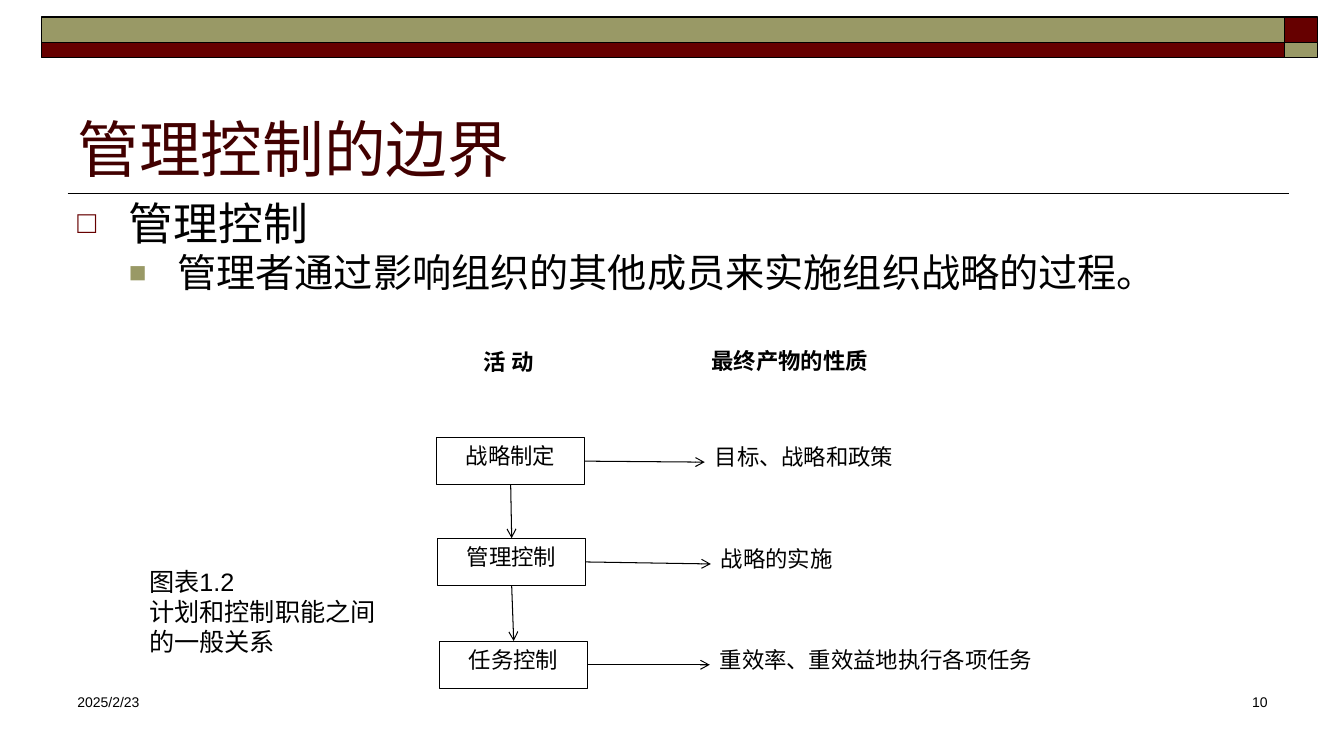
from dataclasses import dataclass

from lxml.etree import SubElement
from pptx import Presentation
from pptx.dml.color import RGBColor
from pptx.enum.shapes import MSO_CONNECTOR, MSO_SHAPE
from pptx.enum.text import MSO_ANCHOR, PP_ALIGN
from pptx.oxml.ns import qn
from pptx.util import Inches, Pt


@dataclass(frozen=True)
class Theme:
    black: str = "000000"
    white: str = "FFFFFF"
    maroon: str = "660000"
    olive: str = "999966"
    title_color: str = "420000"
    heading_font: str = "Noto Sans CJK SC"
    diagram_font: str = "Calibri"
    small_font: str = "Arial"
    title_size: int = 44
    body_size: int = 32
    sub_size: int = 28
    caption_size: int = 18
    diagram_size: int = 16
    footer_size: int = 10


THEME = Theme()


def style(paragraph, font_name, size, color=THEME.black, bold=False):
    font = paragraph.font
    font.name, font.size, font.bold = font_name, Pt(size), bold
    font.color.rgb = RGBColor.from_string(color)
    if font_name == THEME.heading_font:
        properties = paragraph._p.get_or_add_pPr().find(qn("a:defRPr"))
        SubElement(properties, qn("a:ea"), typeface=font_name)


def add_rectangle(slide, left, top, width, height, fill, line_width=None):
    shape = slide.shapes.add_shape(
        MSO_SHAPE.RECTANGLE, Inches(left), Inches(top), Inches(width), Inches(height))
    shape.shadow.inherit = False
    shape.fill.solid()
    shape.fill.fore_color.rgb = RGBColor.from_string(fill)
    if line_width:
        shape.line.color.rgb = RGBColor.from_string(THEME.black)
        shape.line.width = Pt(line_width)
    else:
        shape.line.fill.background()
    return shape


def add_line(slide, start, end, width, arrow=False):
    connector = slide.shapes.add_connector(
        MSO_CONNECTOR.STRAIGHT, *(Inches(value) for value in (*start, *end)))
    connector.line.color.rgb = RGBColor.from_string(THEME.black)
    connector.line.width = Pt(width)
    if arrow:
        SubElement(connector.line._get_or_add_ln(), qn("a:tailEnd"), type="arrow")
    SubElement(connector._element.spPr, qn("a:effectLst"))


def add_text_frame(slide, left, top, width, height):
    box = slide.shapes.add_textbox(Inches(left), Inches(top), Inches(width), Inches(height))
    box.text_frame.word_wrap = True
    return box.text_frame


def add_bullet(paragraph, symbol, color, percent, margin, hanging):
    properties = paragraph._p.get_or_add_pPr()
    properties.set("marL", str(Inches(margin)))
    properties.set("indent", str(-Inches(hanging)))
    SubElement(SubElement(properties, qn("a:buClr")), qn("a:srgbClr"), val=color)
    SubElement(properties, qn("a:buSzPct"), val=str(percent * 1000))
    SubElement(properties, qn("a:buFont"), typeface=THEME.small_font)
    SubElement(properties, qn("a:buChar"), char=symbol)


def add_banner(slide, left, top, width):
    """Two stripes, each ending in a corner block of the other colour."""
    corner = 0.33
    stripe = width - corner
    for offset, height, fill, corner_fill in (
            (0, 0.25, THEME.olive, THEME.maroon),
            (0.25, 0.15, THEME.maroon, THEME.olive)):
        add_rectangle(slide, left, top + offset, stripe, height, fill, 1)
        add_rectangle(slide, left + stripe, top + offset, corner, height, corner_fill, 1)


def add_title(slide, left, top, width, height):
    title = slide.shapes.title
    title.left, title.top = Inches(left), Inches(top)
    title.width, title.height = Inches(width), Inches(height)
    frame = title.text_frame
    frame.text = "管理控制的边界"
    frame.vertical_anchor = MSO_ANCHOR.BOTTOM
    frame.margin_bottom = 0
    paragraph = frame.paragraphs[0]
    paragraph.alignment = PP_ALIGN.LEFT
    style(paragraph, THEME.heading_font, THEME.title_size, THEME.title_color)
    add_line(slide, (left, top + 1.34), (left + width + 0.11, top + 1.34), 1)


def add_body(slide, left, top, width, height):
    frame = add_text_frame(slide, left, top, width, height)
    topic = frame.paragraphs[0]
    topic.text = "管理控制"
    add_bullet(topic, "□", THEME.maroon, 70, 0.51, 0.51)
    style(topic, THEME.heading_font, THEME.body_size)
    topic.space_before = Pt(4)

    definition = frame.add_paragraph()
    definition.text = "管理者通过影响组织的其他成员来实施组织战略的过程。"
    definition.level = 1
    add_bullet(definition, "■", THEME.olive, 75, 0.99, 0.48)
    style(definition, THEME.heading_font, THEME.sub_size)
    definition.line_spacing = 0.9
    definition.space_before = Pt(2.8)


def add_diagram_box(slide, left, top, width, height, text, alignment,
                    line_width=None, bold=False):
    shape = add_rectangle(slide, left, top, width, height, THEME.white, line_width)
    frame = shape.text_frame
    frame.word_wrap = True
    frame.vertical_anchor = MSO_ANCHOR.TOP
    paragraph = frame.paragraphs[0]
    paragraph.text = text
    paragraph.alignment = alignment
    paragraph.space_before = Pt(3.2)
    style(paragraph, THEME.diagram_font, THEME.diagram_size, bold=bold)


def add_diagram(slide, left, top):
    """Activities down the left, the product of each one to its right."""
    width, height = 1.47, 0.47
    product_width = 2.65
    add_diagram_box(slide, left, top + 0.01, width, height, "活 动",
                    PP_ALIGN.CENTER, bold=True)
    add_diagram_box(slide, left + 2.65, top, product_width, height, "最终产物的性质",
                    PP_ALIGN.JUSTIFY, bold=True)

    # Offsets: activity x and y, product x and y, product width
    steps = (
        ("战略制定", 0.02, 0.95, "目标、战略和政策", 2.68, 0.96, product_width),
        ("管理控制", 0.03, 1.95, "战略的实施", 2.74, 1.97, product_width),
        ("任务控制", 0.05, 2.97, "重效率、重效益地执行各项任务", 2.73, 2.97, 3.43),
    )
    previous_bottom = None
    for activity, x, y, product, product_x, product_y, wide in steps:
        box_left, box_top = left + x, top + y
        product_left, product_top = left + product_x, top + product_y
        add_diagram_box(slide, box_left, box_top, width, height, activity,
                        PP_ALIGN.CENTER, line_width=0.5)
        add_diagram_box(slide, product_left, product_top, wide, height, product,
                        PP_ALIGN.JUSTIFY)
        add_line(slide, (box_left + width, box_top + height / 2),
                 (product_left, product_top + height / 2), 0.75, arrow=True)
        middle = box_left + width / 2
        if previous_bottom:
            add_line(slide, previous_bottom, (middle, box_top), 0.75, arrow=True)
        previous_bottom = (middle, box_top + height)


def add_caption(slide, left, top, width, height):
    frame = add_text_frame(slide, left, top, width, height)
    frame.text = "图表1.2\n计划和控制职能之间的一般关系"
    for paragraph in frame.paragraphs:
        style(paragraph, THEME.small_font, THEME.caption_size)
        paragraph.line_spacing = Pt(21.5)


def add_footer(slide, left, top, width, height):
    date_width, number_width = 2.44, 2.78
    for text, x, box_width, alignment in (
            ("2025/2/23", left, date_width, PP_ALIGN.LEFT),
            ("10", left + width - number_width, number_width, PP_ALIGN.RIGHT)):
        paragraph = add_text_frame(slide, x, top, box_width, height).paragraphs[0]
        paragraph.text = text
        paragraph.alignment = alignment
        style(paragraph, THEME.small_font, THEME.footer_size)


def main():
    presentation = Presentation()
    presentation.slide_width, presentation.slide_height = Inches(13.33), Inches(7.5)
    slide = presentation.slides.add_slide(presentation.slide_layouts[5])
    add_banner(slide, 0.41, 0.17, 12.66)
    add_title(slide, 0.67, 0.58, 12, 1.25)
    add_body(slide, 0.67, 1.89, 12, 5.02)
    add_footer(slide, 0.67, 6.83, 12, 0.5)
    add_diagram(slide, 4.31, 3.39)
    add_caption(slide, 1.38, 5.57, 2.53, 1.01)
    presentation.save("out.pptx")


if __name__ == "__main__":
    main()
